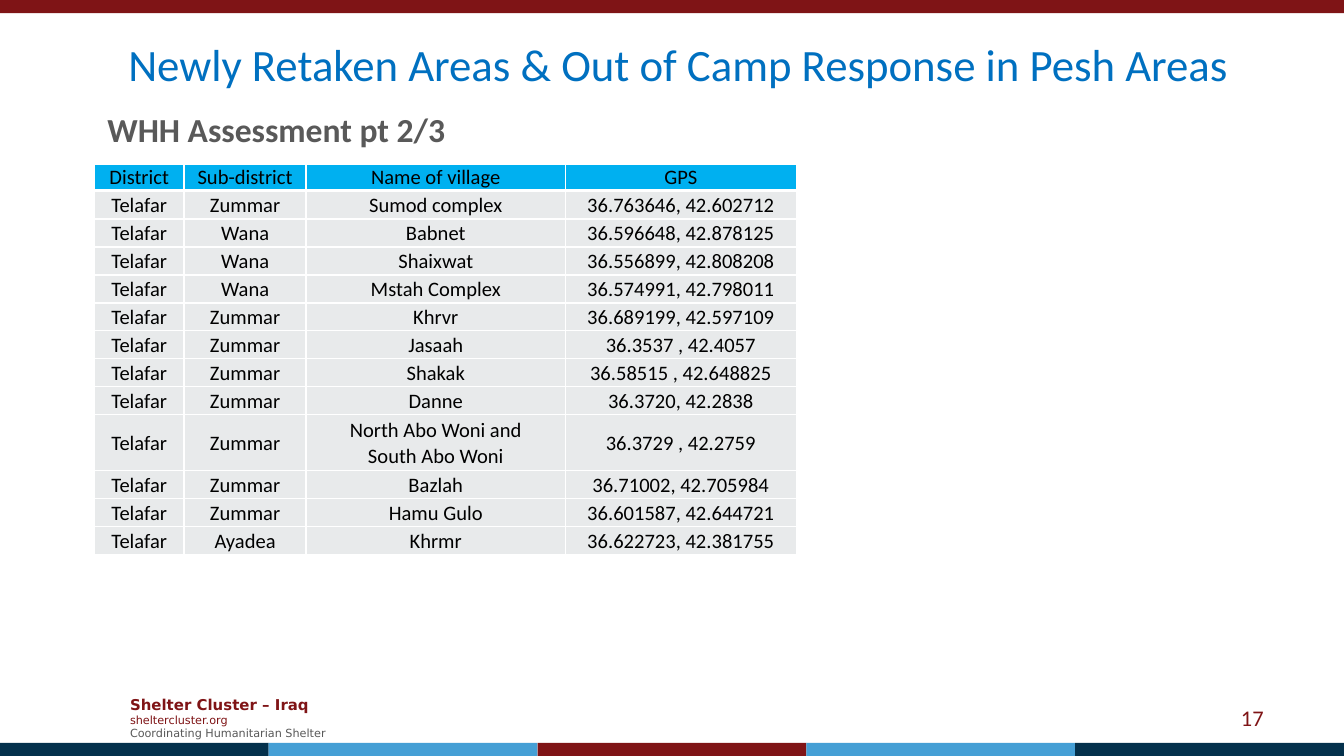
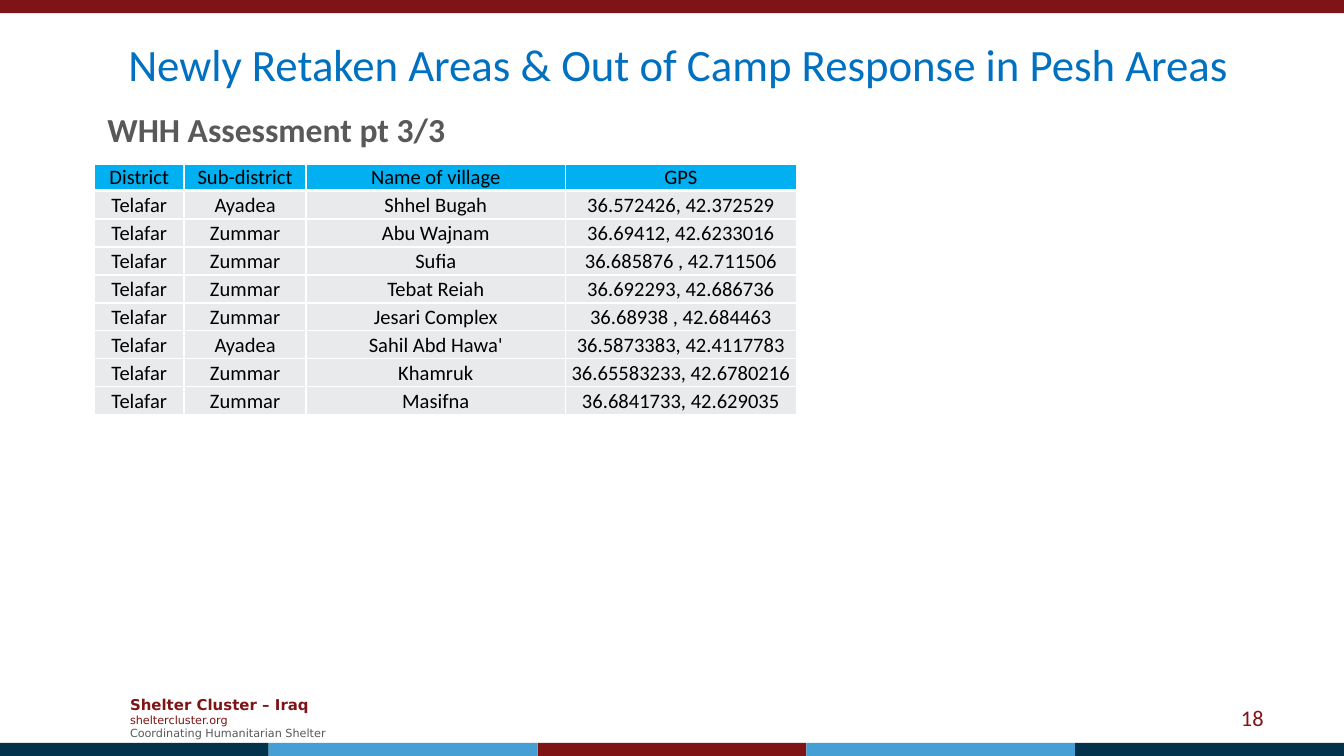
import dataclasses

import lxml.etree
import pptx
import pptx.dml.color
import pptx.enum.shapes
import pptx.enum.text
import pptx.oxml.ns
import pptx.util

Pt = pptx.util.Pt
Align = pptx.enum.text.PP_ALIGN
Anchor = pptx.enum.text.MSO_ANCHOR
WIDTH, HEIGHT = 720, 405


@dataclasses.dataclass(frozen=True)
class Theme:
    body_font: str = "Calibri"
    footer_font: str = "DejaVu Sans"
    maroon: str = "7F1416"
    navy: str = "04314C"
    sky: str = "459FD5"
    title_blue: str = "0070C0"
    grey: str = "595959"
    black: str = "000000"
    white: str = "FFFFFF"
    header_fill: str = "00B0F0"
    row_fill: str = "E8EAEB"
    title_size: int = 24
    subtitle_size: int = 18
    number_size: int = 12
    table_size: int = 11
    footer_size: int = 8
    footer_small: int = 6


TITLE = "Newly Retaken Areas & Out of Camp Response in Pesh Areas"
COLUMN_WIDTHS = (48, 65.5, 138.8, 123.8)
HEADERS = ("District", "Sub-district", "Name of village", "GPS")
DISTRICT = "Telafar"
TABLE_LEFT, HEADER_TOP, ROWS_TOP = 50.6, 87.8, 102.2
HEADER_HEIGHT, ROW_HEIGHT = 13.7, 15

# page number -> subtitle and villages (sub-district, name, GPS)
PAGES = {
    17: ("WHH Assessment pt 2/3", (
        ("Zummar", "Sumod complex", "36.763646, 42.602712"),
        ("Wana", "Babnet", "36.596648, 42.878125"),
        ("Wana", "Shaixwat", "36.556899, 42.808208"),
        ("Wana", "Mstah Complex", "36.574991, 42.798011"),
        ("Zummar", "Khrvr", "36.689199, 42.597109"),
        ("Zummar", "Jasaah", "36.3537 , 42.4057"),
        ("Zummar", "Shakak", "36.58515 , 42.648825"),
        ("Zummar", "Danne", "36.3720, 42.2838"),
        ("Zummar", "North Abo Woni and\nSouth Abo Woni", "36.3729 , 42.2759"),
        ("Zummar", "Bazlah", "36.71002, 42.705984"),
        ("Zummar", "Hamu Gulo", "36.601587, 42.644721"),
        ("Ayadea", "Khrmr", "36.622723, 42.381755"),
    )),
    18: ("WHH Assessment pt 3/3", (
        ("Ayadea", "Shhel Bugah", "36.572426, 42.372529"),
        ("Zummar", "Abu Wajnam", "36.69412, 42.6233016"),
        ("Zummar", "Sufia", "36.685876 , 42.711506"),
        ("Zummar", "Tebat Reiah", "36.692293, 42.686736"),
        ("Zummar", "Jesari Complex", "36.68938 , 42.684463"),
        ("Ayadea", "Sahil Abd Hawa'", "36.5873383, 42.4117783"),
        ("Zummar", "Khamruk", "36.65583233, 42.6780216"),
        ("Zummar", "Masifna", "36.6841733, 42.629035"),
    )),
}


def rgb(color):
    return pptx.dml.color.RGBColor.from_string(color)


def add_cell_borders(cell, color, width):
    """Draw all four sides; call before the fill, which must follow in the XML."""
    properties = cell._tc.get_or_add_tcPr()
    for side in ("a:lnL", "a:lnR", "a:lnT", "a:lnB"):
        line = lxml.etree.SubElement(
            properties, pptx.oxml.ns.qn(side), w=str(Pt(width)))
        fill = lxml.etree.SubElement(line, pptx.oxml.ns.qn("a:solidFill"))
        lxml.etree.SubElement(fill, pptx.oxml.ns.qn("a:srgbClr"), val=color)


class Painter:
    def __init__(self, deck, theme):
        self.deck = deck
        self.theme = theme
        self.page = None

    def new_page(self):
        self.page = self.deck.slides.add_slide(self.deck.slide_layouts[5])

    def style(self, para, text, size, color, bold=False, align=Align.LEFT, font=None):
        para.text = text
        para.alignment = align
        para.font.name = font or self.theme.body_font
        para.font.size = Pt(size)
        para.font.bold = bold
        para.font.color.rgb = rgb(color)

    def title(self, text):
        box = self.page.shapes.title
        box.left, box.top, box.width, box.height = Pt(42.5), Pt(15.8), Pt(641.5), Pt(36)
        box.text_frame.auto_size = pptx.enum.text.MSO_AUTO_SIZE.NONE
        box.text_frame.vertical_anchor = Anchor.TOP
        self.style(box.text_frame.paragraphs[0], text, self.theme.title_size,
                   self.theme.title_blue, align=Align.CENTER)

    def text(self, left, top, width, height, lines, anchor=Anchor.TOP):
        """Add a text box; each line is a dict of arguments for style."""
        box = self.page.shapes.add_textbox(Pt(left), Pt(top), Pt(width), Pt(height))
        frame = box.text_frame
        frame.word_wrap = True
        frame.vertical_anchor = anchor
        for index, line in enumerate(lines):
            para = frame.add_paragraph() if index else frame.paragraphs[0]
            self.style(para, **line)

    def band(self, left, top, width, color):
        shape = self.page.shapes.add_shape(
            pptx.enum.shapes.MSO_SHAPE.RECTANGLE, Pt(left), Pt(top), Pt(width), Pt(7))
        shape.shadow.inherit = False
        shape.fill.solid()
        shape.fill.fore_color.rgb = rgb(color)
        shape.line.fill.background()

    def table(self, top, rows, row_height, fill):
        heights = [row_height * max(text.count("\n") + 1 for text in row) for row in rows]
        table = self.page.shapes.add_table(
            len(rows), len(COLUMN_WIDTHS), Pt(TABLE_LEFT), Pt(top),
            Pt(sum(COLUMN_WIDTHS)), Pt(sum(heights))).table
        table.first_row = table.horz_banding = False
        for column, width in zip(table.columns, COLUMN_WIDTHS):
            column.width = Pt(width)
        for table_row, height, texts in zip(table.rows, heights, rows):
            table_row.height = Pt(height)
            for cell, text in zip(table_row.cells, texts):
                self.cell(cell, text, fill)

    def cell(self, cell, text, fill):
        cell.margin_left = cell.margin_right = cell.margin_top = Pt(0.7)
        cell.margin_bottom = 0
        cell.vertical_anchor = Anchor.MIDDLE
        add_cell_borders(cell, self.theme.white, 1)
        cell.fill.solid()
        cell.fill.fore_color.rgb = rgb(fill)
        self.style(cell.text_frame.paragraphs[0], text, self.theme.table_size,
                   self.theme.black, align=Align.CENTER)

    def frame(self, number):
        """Add the footer, the bands and the page number."""
        theme = self.theme
        footer = (
            ("Shelter Cluster – Iraq", theme.footer_size, theme.maroon, True),
            ("sheltercluster.org", theme.footer_small, theme.maroon, False),
            ("Coordinating Humanitarian Shelter", theme.footer_small, theme.grey, False),
        )
        self.text(62.6, 368.6, 124.6, 31.7, [
            dict(text=text, size=size, color=color, bold=bold, font=theme.footer_font)
            for text, size, color, bold in footer], Anchor.MIDDLE)
        self.band(0, 0, WIDTH, theme.maroon)
        colors = (theme.navy, theme.sky, theme.maroon, theme.sky, theme.navy)
        step = WIDTH / len(colors)
        for index, color in enumerate(colors):
            self.band(index * step, HEIGHT - 7, step, color)
        self.text(516, 373.7, 168, 21.6, [
            dict(text=str(number), size=theme.number_size, color=theme.maroon,
                 align=Align.RIGHT)], Anchor.MIDDLE)


def main():
    deck = pptx.Presentation()
    deck.slide_width, deck.slide_height = Pt(WIDTH), Pt(HEIGHT)
    theme = Theme()
    painter = Painter(deck, theme)
    for number, (subtitle, villages) in PAGES.items():
        painter.new_page()
        painter.frame(number)
        painter.title(TITLE)
        painter.text(50.4, 54.7, 586, 29, [
            dict(text=subtitle, size=theme.subtitle_size, color=theme.grey, bold=True)])
        painter.table(HEADER_TOP, [HEADERS], HEADER_HEIGHT, theme.header_fill)
        painter.table(ROWS_TOP, [(DISTRICT, *village) for village in villages],
                      ROW_HEIGHT, theme.row_fill)
    deck.save("out.pptx")


if __name__ == "__main__":
    main()
